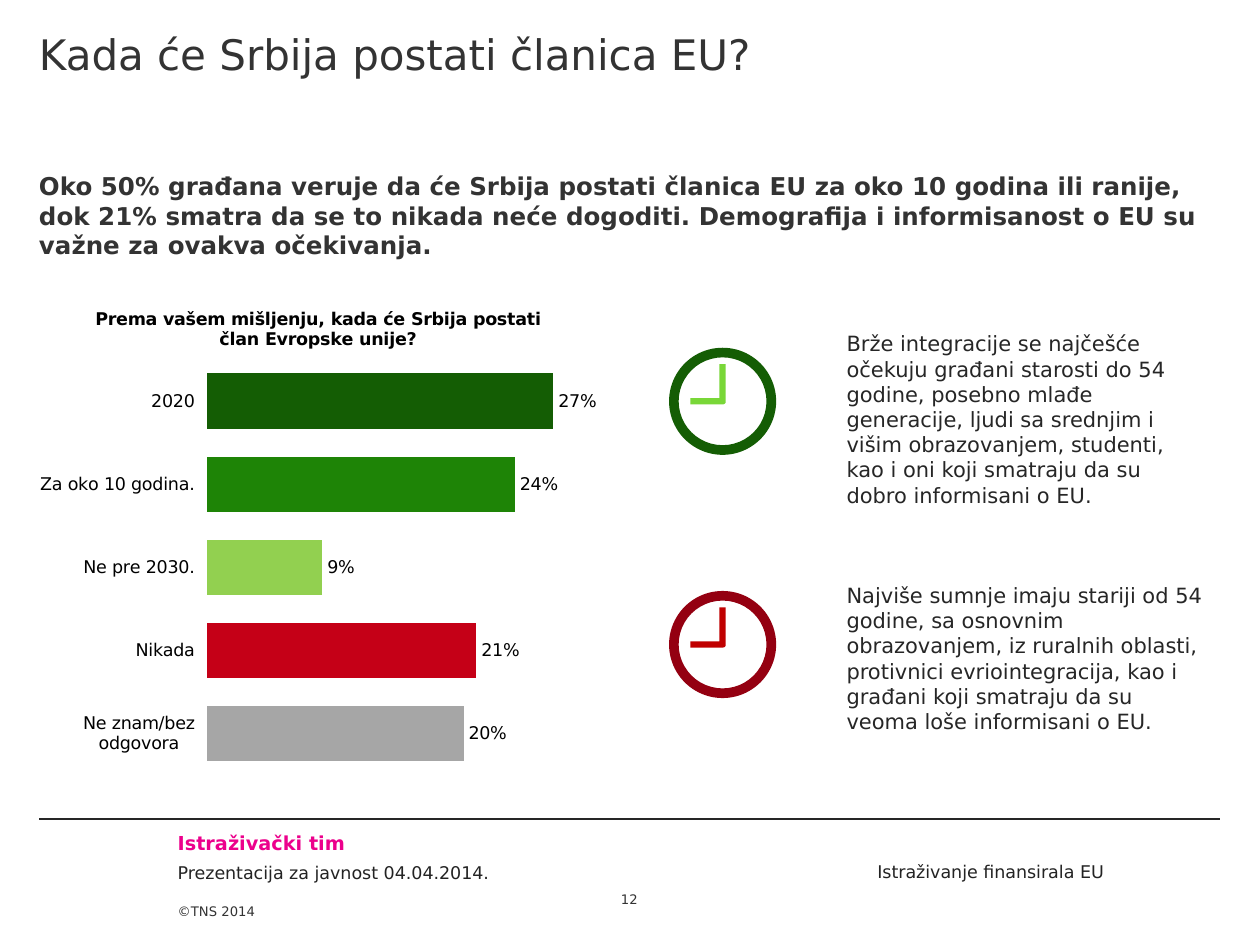
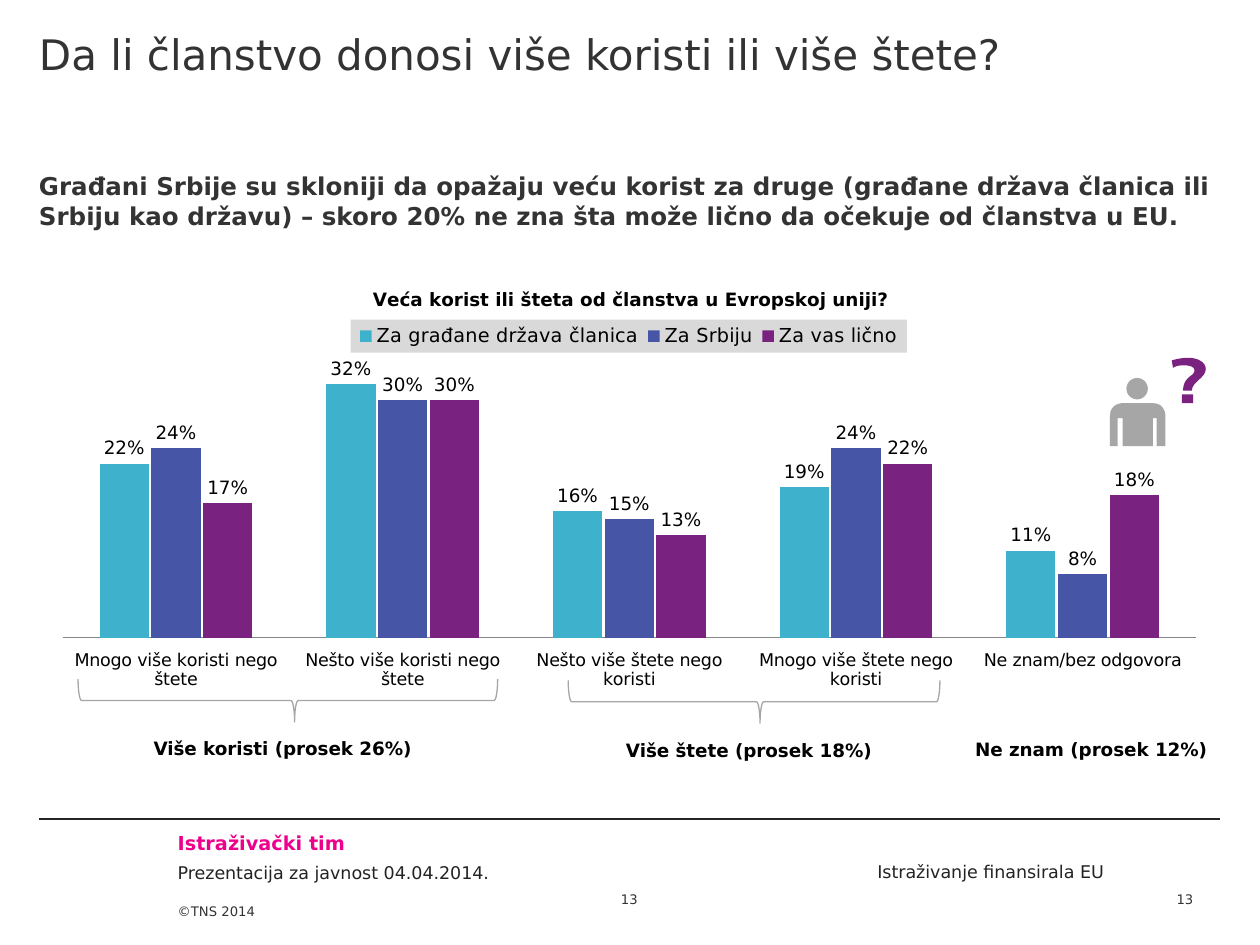
from lxml import etree
from pptx import Presentation
from pptx.chart.data import CategoryChartData
from pptx.dml.color import RGBColor
from pptx.enum.chart import (XL_CHART_TYPE, XL_LABEL_POSITION,
                             XL_LEGEND_POSITION, XL_TICK_LABEL_POSITION,
                             XL_TICK_MARK)
from pptx.enum.shapes import MSO_CONNECTOR, MSO_SHAPE
from pptx.enum.text import MSO_ANCHOR, PP_ALIGN
from pptx.oxml.ns import qn
from pptx.util import Inches, Pt

FONT = "DejaVu Sans"
BLACK = RGBColor(0, 0, 0)
DARK = RGBColor(0x33, 0x33, 0x33)
INK = RGBColor(0x26, 0x26, 0x26)
FOOT = RGBColor(0x23, 0x23, 0x23)
PINK = RGBColor(0xEC, 0x00, 0x8C)
GRAY = RGBColor(0xA6, 0xA6, 0xA6)
PALE = RGBColor(0xD9, 0xD9, 0xD9)
AXIS = RGBColor(0x86, 0x86, 0x86)
FOREST = RGBColor(0x14, 0x5D, 0x04)
GREEN = RGBColor(0x1E, 0x84, 0x06)
LIME = RGBColor(0x92, 0xD0, 0x50)
LEAF = RGBColor(0x79, 0xD7, 0x38)
RED = RGBColor(0xC5, 0x00, 0x17)
WINE = RGBColor(0x94, 0x00, 0x11)
BRICK = RGBColor(0xC0, 0x00, 0x00)
CYAN = RGBColor(0x3E, 0xB1, 0xCC)
BLUE = RGBColor(0x46, 0x55, 0xA5)
PLUM = RGBColor(0x7A, 0x22, 0x80)

LEFT, CENTER, RIGHT = PP_ALIGN.LEFT, PP_ALIGN.CENTER, PP_ALIGN.RIGHT
TOP, MIDDLE, BOTTOM = MSO_ANCHOR.TOP, MSO_ANCHOR.MIDDLE, MSO_ANCHOR.BOTTOM
BAR, COLUMN = XL_CHART_TYPE.BAR_CLUSTERED, XL_CHART_TYPE.COLUMN_CLUSTERED
NO_TICK = XL_TICK_MARK.NONE
PERCENT = "0\\%"
NONE = (0, 0, 0, 0)
HEAD = (0, 0.23, 0, 0)


# Text and shapes
def style(font, size, color=BLACK, bold=False):
    font.name, font.size, font.bold = FONT, Pt(size), bold
    font.color.rgb = color


def write(slide, box, lines, size, color=DARK, bold=False, align=LEFT,
          anchor=TOP, inset=NONE, gap=0, wrap=True):
    frame = slide.shapes.add_textbox(*map(Inches, box)).text_frame
    frame.word_wrap, frame.vertical_anchor = wrap, anchor
    (frame.margin_left, frame.margin_top,
     frame.margin_right, frame.margin_bottom) = map(Inches, inset)
    for i, line in enumerate(lines):
        para = frame.add_paragraph() if i else frame.paragraphs[0]
        para.text, para.alignment = line, align
        if i:
            para.space_before = Pt(gap)
        style(para.font, size, color, bold)


def paint(shape, color):
    shape.shadow.inherit = False
    shape.fill.solid()
    shape.fill.fore_color.rgb = color
    shape.line.fill.background()


def add(slide, kind, box, color):
    shape = slide.shapes.add_shape(kind, *map(Inches, box))
    paint(shape, color)
    return shape


def trace(steps):
    """Turn points and cubic curves (three points each) into a polygon."""
    points = [steps[0]]
    for step in steps[1:]:
        if len(step) == 2:
            points.append(step)
            continue
        ax, ay = points[-1]
        bx, by, cx, cy, dx, dy = step
        for i in range(1, 9):
            t = i / 8
            u = 1 - t
            a, b, c, d = u ** 3, 3 * u * u * t, 3 * u * t * t, t ** 3
            points.append((a * ax + b * bx + c * cx + d * dx,
                           a * ay + b * by + c * cy + d * dy))
    return points


def outline(slide, left, top, color, *paths):
    pen = None
    for steps in paths:
        pts = [(Inches(left + x), Inches(top + y)) for x, y in trace(steps)]
        if pen is None:
            pen = slide.shapes.build_freeform(*pts[0])
        else:
            pen.move_to(*pts[0])
        pen.add_line_segments(pts[1:], close=True)
    paint(pen.convert_to_shape(), color)


# Frame shared by the slides
def base(deck, title, lead, page):
    slide = deck.slides.add_slide(deck.slide_layouts[6])
    write(slide, (1.41, 6.92, 0.83, 0.58), ["©TNS 2014"], 7.5,
          anchor=BOTTOM, inset=(0, 0, 0, 0.29))
    rule = slide.shapes.add_connector(
        MSO_CONNECTOR.STRAIGHT, *map(Inches, (0.31, 6.5, 9.68, 6.5)))
    rule.line.color.rgb, rule.line.width = INK, Pt(0.75)
    etree.SubElement(rule._element.spPr, qn("a:effectLst"))
    write(slide, (1.41, 6.6, 3.31, 0.19), ["Istraživački tim"], 11, PINK, True)
    write(slide, (1.41, 6.84, 3.31, 0.17),
          ["Prezentacija za javnost 04.04.2014."], 10, FOOT)
    write(slide, (5.36, 6.83, 3.4, 0.17), ["Istraživanje finansirala EU"],
          10, FOOT, align=RIGHT)
    write(slide, (0.31, 0, 9.37, 1.13), [title], 24, inset=HEAD)
    write(slide, (0.31, 1.13, 9.37, 0.83), [lead], 14, bold=True, inset=HEAD)
    number(slide, 4.72, page)
    return slide


def number(slide, left, page):
    write(slide, (left, 6.92, 0.55, 0.28), [str(page)], 7.5,
          align=CENTER, anchor=BOTTOM)


# Charts
def place(part, x, y, w=None, h=None, inner=False):
    """Set a manual layout, as shares of the chart, on a chart part."""
    for old in part.findall(qn("c:layout")):
        part.remove(old)
    layout = etree.Element(qn("c:layout"))
    manual = etree.SubElement(layout, qn("c:manualLayout"))
    items = [("layoutTarget", "inner")] if inner else []
    items += [("xMode", "edge"), ("yMode", "edge"), ("x", x), ("y", y)]
    if w:
        items += [("w", w), ("h", h)]
    for name, val in items:
        etree.SubElement(manual, qn("c:" + name)).set("val", str(val))
    before = [e for e in part if e.tag in (qn("c:tx"), qn("c:legendPos"))]
    part.insert(part.index(before[0]) + 1 if before else 0, layout)


def plot(slide, kind, box, title, cats, rows, size, top, gap, area, spot):
    data = CategoryChartData(number_format=PERCENT)
    data.categories = cats
    for name, vals, _ in rows:
        data.add_series(name, vals)
    chart = slide.shapes.add_chart(kind, *map(Inches, box), data).chart
    style(chart.font, 11)
    chart.has_legend = False
    chart.has_title = True
    para = chart.chart_title.text_frame.paragraphs[0]
    para.text = title
    style(para.font, size, bold=True)
    chart.chart_title.include_in_layout = False
    place(chart.chart_title._element, *spot)
    place(chart._chartSpace.chart.plotArea, *area, inner=True)

    scale, axis = chart.value_axis, chart.category_axis
    scale.minimum_scale, scale.maximum_scale = 0, top
    scale.has_major_gridlines = scale.visible = False
    axis.major_tick_mark = axis.minor_tick_mark = NO_TICK
    axis.tick_label_position = XL_TICK_LABEL_POSITION.LOW
    style(axis.tick_labels.font, 10)

    bars = chart.plots[0]
    bars.gap_width, bars.vary_by_categories = gap, False
    for series, (_, _, color) in zip(bars.series, rows):
        series.format.fill.solid()
        series.format.fill.fore_color.rgb = color
        series.invert_if_negative = False
        labels = series.data_labels
        labels.show_value = True
        labels.number_format, labels.number_format_is_linked = PERCENT, False
        labels.position = XL_LABEL_POSITION.OUTSIDE_END
        style(labels.font, size)
    return chart


def when(slide):
    cats = ["2020", "Za oko 10 godina.", "Ne pre 2030.", "Nikada",
            "Ne znam/bez odgovora"]
    chart = plot(slide, BAR, (0.23, 2.26, 4.56, 3.97),
                 "Prema vašem mišljenju, kada će Srbija postati "
                 "član Evropske unije?",
                 cats, [("Series 1", (27, 24, 9, 21, 20), RED)], 10, 30, 50,
                 (0.31, 0.15, 0.67, 0.83), (0.11, 0.04))
    chart.category_axis.reverse_order = True
    chart.category_axis.format.line.fill.background()
    points = chart.plots[0].series[0].points
    for i, color in enumerate((FOREST, GREEN, LIME, RED, GRAY)):
        fill = points[i].format.fill
        fill.solid()
        fill.fore_color.rgb = color


def gain(slide):
    cats = ["Mnogo više koristi nego štete", "Nešto više koristi nego štete",
            "Nešto više štete nego koristi", "Mnogo više štete nego koristi",
            "Ne znam/bez odgovora"]
    rows = [("Za građane država članica", (22, 32, 16, 19, 11), CYAN),
            ("Za Srbiju", (24, 30, 15, 24, 8), BLUE),
            ("Za vas lično", (17, 30, 13, 22, 18), PLUM)]
    chart = plot(slide, COLUMN, (0.31, 2.08, 9.37, 3.41),
                 "Veća korist ili šteta od članstva u Evropskoj uniji?",
                 cats, rows, 10.5, 35, 150,
                 (0.02, 0.23, 0.96, 0.645), (0.28, 0.05))
    chart.plots[0].overlap = -5
    chart.category_axis.format.line.color.rgb = AXIS
    chart.has_legend = True
    legend = chart.legend
    legend.position = XL_LEGEND_POSITION.TOP
    legend.include_in_layout = False
    style(legend.font, 11)
    place(legend._element, 0.264, 0.134, 0.471, 0.077)
    # Legend background goes between the overlay and the text properties
    back = etree.Element(qn("c:spPr"))
    fill = etree.SubElement(back, qn("a:solidFill"))
    etree.SubElement(fill, qn("a:srgbClr")).set("val", str(PALE))
    legend._element.find(qn("c:txPr")).addprevious(back)


# Icons and marks
def clock(slide, left, top, ring, hand):
    rim = add(slide, MSO_SHAPE.DONUT, (left, top, 0.85, 0.85), ring)
    rim.adjustments[0] = 0.09
    outline(slide, left, top, hand,
            [(0.4, 0.13), (0.4, 0.4), (0.17, 0.4), (0.17, 0.45), (0.42, 0.45),
             (0.44, 0.45, 0.45, 0.44, 0.45, 0.43), (0.45, 0.13)])


def person(slide, left, top):
    add(slide, MSO_SHAPE.OVAL, (left + 0.13, top + 0.16, 0.17, 0.17), GRAY)
    outline(slide, left, top, GRAY,
            [(0.1, 0.36), (0.1, 0.36, 0, 0.36, 0, 0.46), (0, 0.7),
             (0.06, 0.7), (0.06, 0.48), (0.1, 0.48), (0.1, 0.7), (0.34, 0.7),
             (0.34, 0.48), (0.37, 0.48), (0.37, 0.7), (0.44, 0.7),
             (0.44, 0.46), (0.44, 0.46, 0.44, 0.36, 0.34, 0.36)])
    # Question mark: hook and dot
    outline(slide, left + 0.49, top, PLUM,
            [(0, 0.02), (0.04, 0.01, 0.08, 0, 0.13, 0),
             (0.2, 0, 0.27, 0.03, 0.27, 0.09),
             (0.27, 0.16, 0.16, 0.19, 0.16, 0.26), (0.09, 0.26),
             (0.09, 0.21, 0.11, 0.18, 0.13, 0.16),
             (0.15, 0.14, 0.18, 0.13, 0.18, 0.1),
             (0.18, 0.07, 0.14, 0.06, 0.1, 0.06),
             (0.07, 0.06, 0.04, 0.06, 0.01, 0.08)],
            [(0.08, 0.29), (0.17, 0.29), (0.17, 0.36), (0.08, 0.36)])


def brace(slide, left, top, width, depth=0.34):
    """Place a brace that opens upwards; the frame is turned by 270°."""
    box = (left + (width - depth) / 2, top + (depth - width) / 2, depth, width)
    mark = add(slide, MSO_SHAPE.LEFT_BRACE, box, GRAY)
    mark.fill.background()
    mark.line.color.rgb, mark.line.width = GRAY, Pt(0.75)
    mark.rotation = 270
    mark.adjustments[0], mark.adjustments[1] = 0.083, 0.516


def main():
    deck = Presentation()
    deck.slide_width, deck.slide_height = Inches(10), Inches(7.5)

    # When Serbia joins
    slide = base(deck, "Kada će Srbija postati članica EU?",
                 "Oko 50% građana veruje da će Srbija postati članica EU za "
                 "oko 10 godina ili ranije, dok 21% smatra da se to nikada "
                 "neće dogoditi. Demografija i informisanost o EU su važne "
                 "za ovakva očekivanja.", 12)
    when(slide)
    write(slide, (6.62, 2.49, 3.05, 3.47),
          ["Brže integracije se najčešće očekuju građani starosti do 54 "
           "godine, posebno mlađe generacije, ljudi sa srednjim i višim "
           "obrazovanjem, studenti, kao i oni koji smatraju da su dobro "
           "informisani o EU.",
           "Najviše sumnje imaju stariji od 54 godine, sa osnovnim "
           "obrazovanjem, iz ruralnih oblasti, protivnici evriointegracija, "
           "kao i građani koji smatraju da su veoma loše informisani o EU."],
          12, INK, anchor=MIDDLE, inset=(0.1, 0.05, 0.1, 0.05), gap=43)
    clock(slide, 5.31, 2.76, FOREST, LEAF)
    clock(slide, 5.31, 4.69, WINE, BRICK)

    # Benefit or harm
    slide = base(deck, "Da li članstvo donosi više koristi ili više štete?",
                 "Građani Srbije su skloniji da opažaju veću korist za druge "
                 "(građane država članica ili Srbiju kao državu) – skoro 20% "
                 "ne zna šta može lično da očekuje od članstva u EU.", 13)
    number(slide, 9.13, 13)
    gain(slide)
    person(slide, 8.81, 2.84)
    brace(slide, 0.62, 5.39, 3.33)
    brace(slide, 4.51, 5.4, 2.95)
    for left, top, width, text in (
            (1.12, 5.8, 2.45, "Više koristi (prosek 26%)"),
            (4.87, 5.82, 2.33, "Više štete (prosek 18%)"),
            (7.64, 5.81, 2.15, "Ne znam (prosek 12%)")):
        write(slide, (left, top, width, 0.29), [text], 10.5, BLACK, True,
              inset=(0.1, 0.05, 0.1, 0.05), wrap=False)

    deck.save("out.pptx")


if __name__ == "__main__":
    main()
